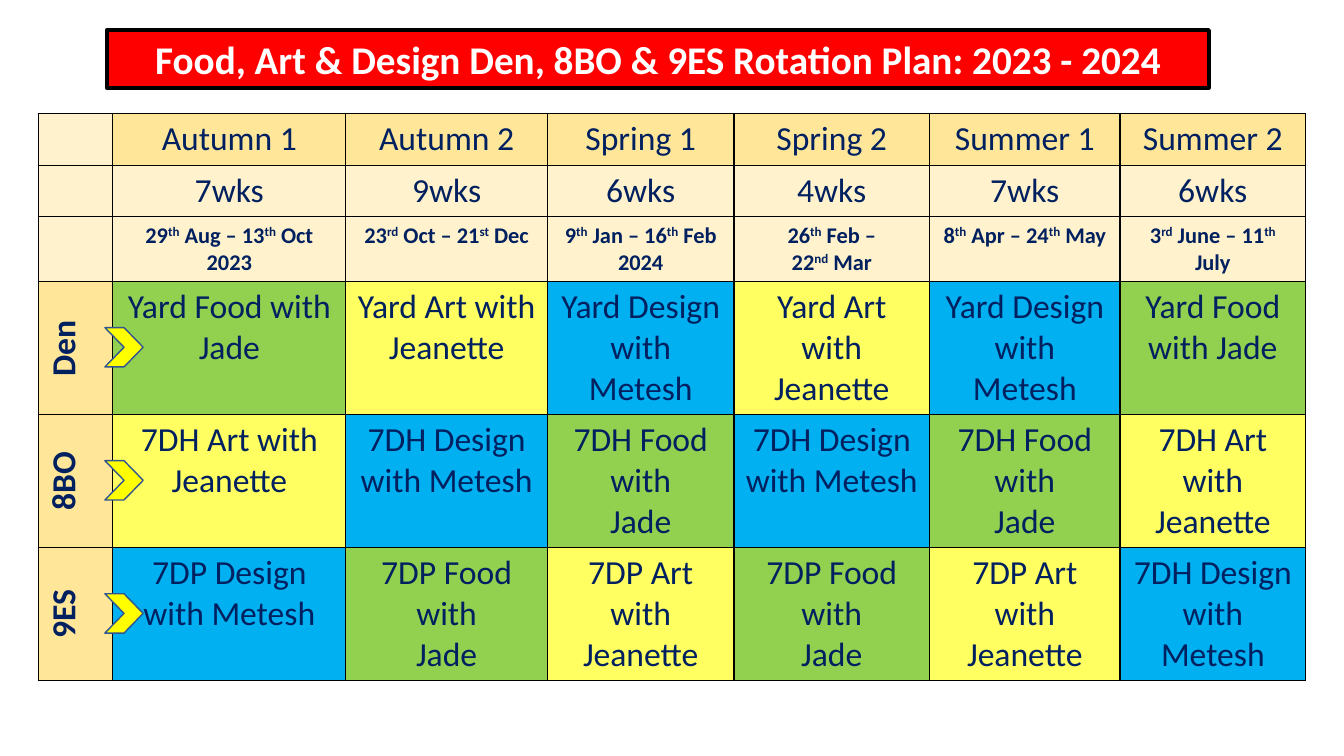
import pptx
import pptx.dml.color
import pptx.enum.shapes
import pptx.enum.text
import pptx.oxml
import pptx.oxml.ns
import pptx.util

Inches = pptx.util.Inches
Pt = pptx.util.Pt
SHAPES = pptx.enum.shapes.MSO_SHAPE

COLORS = {
    "title": "FF0000", "white": "FFFFFF", "black": "000000", "navy": "002060",
    "head": "FFE699", "pale": "FFF2CC", "marker": "FFFF00", "marker_line": "325491",
    "Food": "92D050", "Art": "FFFF61", "Design": "00B0F0",
}
COL_WIDTHS = [0.74, 2.31, 2, 1.85, 1.94, 1.89, 1.84]
ROW_HEIGHTS = [0.51, 0.51, 0.64, 1.32, 1.32, 1.32]

# Text between carets is superscript; a newline starts a paragraph
HALF_TERMS = ["", "Autumn 1", "Autumn 2", "Spring 1", "Spring 2", "Summer 1", "Summer 2"]
WEEKS = ["", "7wks", "9wks", "6wks", "4wks", "7wks", "6wks"]
DATES = ["", "29^th^ Aug – 13^th^ Oct\n2023", "23^rd^ Oct – 21^st^ Dec",
         "9^th^ Jan – 16^th^ Feb\n2024", "26^th^ Feb –\n22^nd^ Mar",
         "8^th^ Apr – 24^th^ May", "3^rd^ June – 11^th^ July"]
ROTATION = [
    ["Den", "Yard Food with Jade", "Yard Art with Jeanette", "Yard Design with Metesh",
     "Yard Art with Jeanette", "Yard Design with Metesh", "Yard Food with Jade"],
    ["8BO", "7DH Art with Jeanette", "7DH Design with Metesh", "7DH Food with\nJade",
     "7DH Design with Metesh", "7DH Food with\nJade", "7DH Art with Jeanette"],
    ["9ES", "7DP Design with Metesh", "7DP Food with\nJade", "7DP Art with Jeanette",
     "7DP Food with\nJade", "7DP Art with Jeanette", "7DH Design with Metesh"],
]


def rgb(name):
    return pptx.dml.color.RGBColor.from_string(COLORS[name])


def write_text(tf, text, color="navy", **font):
    """Fill a text frame with centred paragraphs."""
    formats = {"name": "Calibri", "size": Pt(24), "bold": False, **font}
    for i, line in enumerate(text.split("\n")):
        p = tf.add_paragraph() if i else tf.paragraphs[0]
        p.alignment = pptx.enum.text.PP_ALIGN.CENTER
        for j, part in enumerate(line.split("^")):
            r = p.add_run()
            r.text = part
            for key, value in formats.items():
                setattr(r.font, key, value)
            r.font.color.rgb = rgb(color)
            if j % 2:
                r._r.get_or_add_rPr().set("baseline", "30000")


def add_box(s, kind, x, y, w, h, fill, line, line_width):
    sp = s.shapes.add_shape(kind, Inches(x), Inches(y), Inches(w), Inches(h))
    sp.shadow.inherit = False
    sp.fill.solid()
    sp.fill.fore_color.rgb = rgb(fill)
    sp.line.color.rgb = rgb(line)
    sp.line.width = Pt(line_width)
    return sp


def style_cell(cell, fill):
    """Give a cell black borders and a plain fill."""
    tcPr = cell._tc.get_or_add_tcPr()
    for side in "LRTB":
        tcPr.append(pptx.oxml.parse_xml(
            f'<a:ln{side} {pptx.oxml.ns.nsdecls("a")} w="{Pt(1)}"><a:solidFill>'
            f'<a:srgbClr val="{COLORS["black"]}"/></a:solidFill></a:ln{side}>'))
    cell.fill.solid()
    cell.fill.fore_color.rgb = rgb(fill)


def add_plan(s):
    rows = [HALF_TERMS, WEEKS, DATES, *ROTATION]
    table = s.shapes.add_table(
        len(rows), len(COL_WIDTHS), Inches(0.38), Inches(1.13),
        Inches(sum(COL_WIDTHS)), Inches(sum(ROW_HEIGHTS))).table
    for col, width in zip(table.columns, COL_WIDTHS):
        col.width = Inches(width)
    for row, height in zip(table.rows, ROW_HEIGHTS):
        row.height = Inches(height)

    for i, row in enumerate(rows):
        for j, text in enumerate(row):
            cell = table.cell(i, j)
            is_group = i > 2 and j == 0
            if is_group or (i == 0 and j > 0):
                fill = "head"
            elif i > 2:
                fill = text.split()[1]
            else:
                fill = "pale"
            style_cell(cell, fill)
            if is_group:
                cell._tc.get_or_add_tcPr().set("vert", "vert270")
            if text:
                write_text(cell.text_frame, text, size=Pt(16 if i == 2 else 24),
                           bold=is_group or i == 2)


def main():
    prs = pptx.Presentation()
    prs.slide_width, prs.slide_height = Inches(13.33), Inches(7.5)
    s = prs.slides.add_slide(prs.slide_layouts[6])

    # Rotation table
    add_plan(s)

    # Title banner
    sp = add_box(s, SHAPES.RECTANGLE, 1.06, 0.3, 10.93, 0.57, "title", "black", 3)
    sp.text_frame.word_wrap = True
    write_text(sp.text_frame, "Food, Art & Design Den, 8BO & 9ES Rotation Plan: 2023 - 2024",
               "white", size=Pt(28), bold=True)

    # One chevron beside each group
    for i in range(len(ROTATION)):
        add_box(s, SHAPES.CHEVRON, 1.04, 3.25 + 1.32 * i, 0.38, 0.39,
                "marker", "marker_line", 1)

    prs.save("out.pptx")


if __name__ == "__main__":
    main()
